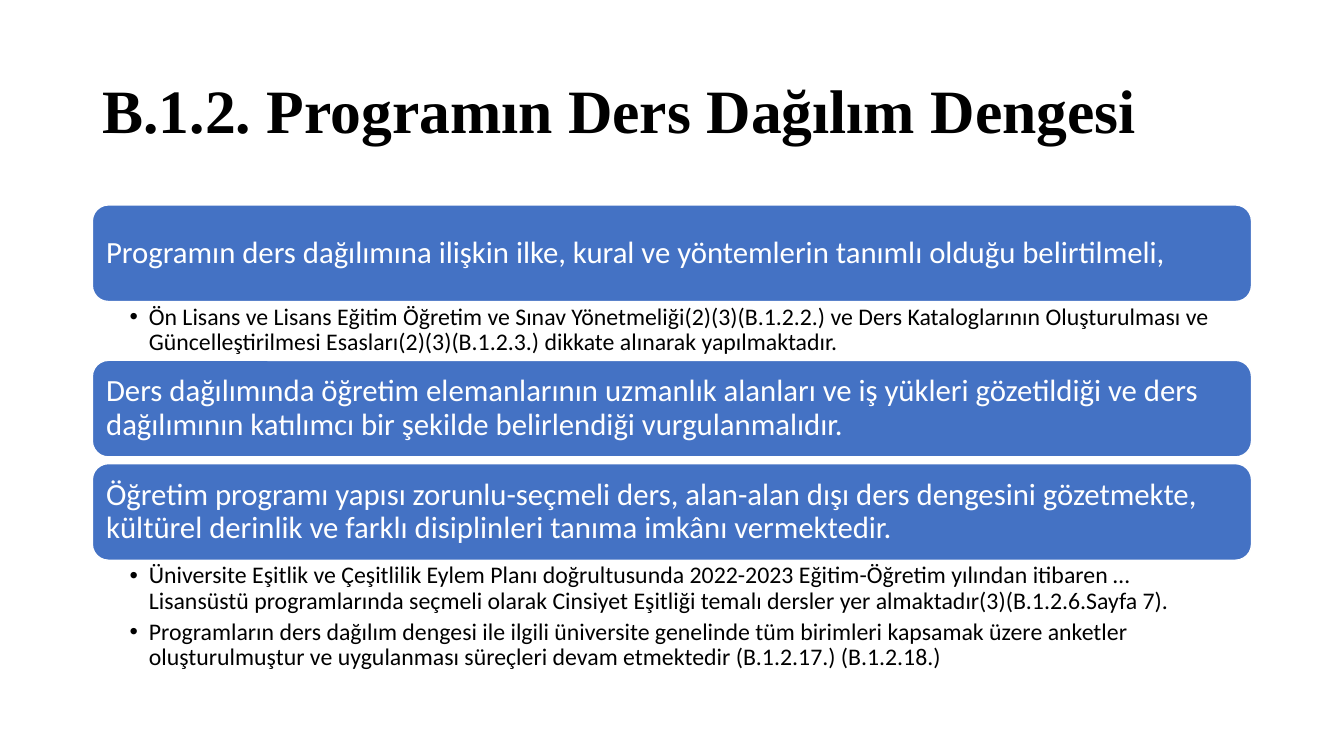
from dataclasses import dataclass

from lxml import etree
from pptx import Presentation
from pptx.dml.color import RGBColor
from pptx.enum.shapes import MSO_SHAPE
from pptx.enum.text import MSO_ANCHOR, MSO_AUTO_SIZE, PP_ALIGN
from pptx.oxml.ns import qn
from pptx.util import Inches, Pt

ROUNDED = MSO_SHAPE.ROUNDED_RECTANGLE
MIDDLE, TOP = MSO_ANCHOR.MIDDLE, MSO_ANCHOR.TOP
LEFT = PP_ALIGN.LEFT
NO_FIT = MSO_AUTO_SIZE.NONE

CELL = Inches(1 / 12)
COLUMNS, ROWS = 160, 90
MARGIN, WIDTH = 11, 138
TITLE_TOP, TITLE_ROWS = 4.8, 17.4
STACK_TOP, BAR_ROWS, GAP_ROWS = 24.4, 11.5, 0.8


@dataclass(frozen=True)
class Theme:
    """Colours, fonts and type sizes of the slide."""

    blue: RGBColor = RGBColor(0x44, 0x72, 0xC4)
    white: RGBColor = RGBColor(0xFF, 0xFF, 0xFF)
    black: RGBColor = RGBColor(0, 0, 0)
    title_font: str = "Times New Roman"
    body_font: str = "Calibri"
    title_size: int = 44
    bar_size: int = 22
    bullet_size: int = 17


THEME = Theme()

SECTIONS = [
    (
        "Programın ders dağılımına ilişkin ilke, kural ve yöntemlerin tanımlı olduğu belirtilmeli,",
        7,
        ["Ön Lisans ve Lisans Eğitim Öğretim ve Sınav Yönetmeliği(2)(3)(B.1.2.2.) ve Ders "
         "Kataloglarının Oluşturulması ve Güncelleştirilmesi Esasları(2)(3)(B.1.2.3.) dikkate "
         "alınarak yapılmaktadır."],
    ),
    (
        "Ders dağılımında öğretim elemanlarının uzmanlık alanları ve iş yükleri gözetildiği ve ders "
        "dağılımının katılımcı bir şekilde belirlendiği vurgulanmalıdır.",
        GAP_ROWS,
        [],
    ),
    (
        "Öğretim programı yapısı zorunlu-seçmeli ders, alan-alan dışı ders dengesini gözetmekte, "
        "kültürel derinlik ve farklı disiplinleri tanıma imkânı vermektedir.",
        14,
        ["Üniversite Eşitlik ve Çeşitlilik Eylem Planı doğrultusunda 2022-2023 Eğitim-Öğretim "
         "yılından itibaren … Lisansüstü programlarında seçmeli olarak Cinsiyet Eşitliği temalı "
         "dersler yer almaktadır(3)(B.1.2.6.Sayfa 7).",
         "Programların ders dağılım dengesi ile ilgili üniversite genelinde tüm birimleri kapsamak "
         "üzere anketler oluşturulmuştur ve uygulanması süreçleri devam etmektedir (B.1.2.17.) "
         "(B.1.2.18.)"],
    ),
]


def area(top, rows):
    """Return left, top, width and height of a full-width band of grid rows."""
    return [round(CELL * cells) for cells in (MARGIN, top, WIDTH, rows)]


def prepare_frame(frame, anchor, insets):
    """Set wrapping, anchor and the left, top, right and bottom insets."""
    frame.word_wrap = True
    frame.auto_size = NO_FIT
    frame.vertical_anchor = anchor
    (frame.margin_left, frame.margin_top,
     frame.margin_right, frame.margin_bottom) = map(Inches, insets)


def write(para, text, font, size, color, bold=False):
    """Add one formatted run to a left-aligned paragraph."""
    para.alignment = LEFT
    para.line_spacing = 0.9
    span = para.add_run()
    span.text = text
    span.font.name = font
    span.font.size = Pt(size)
    span.font.bold = bold
    span.font.color.rgb = color


def add_bullet(para):
    """Give a paragraph a hanging round bullet."""
    properties = para._p.get_or_add_pPr()
    properties.set("marL", str(Inches(0.19)))
    properties.set("indent", str(-Inches(0.19)))
    etree.SubElement(properties, qn("a:buFont")).set("typeface", "Arial")
    etree.SubElement(properties, qn("a:buChar")).set("char", "•")


def set_title(page, text):
    """Place and format the title placeholder."""
    title = page.shapes.title
    title.left, title.top, title.width, title.height = area(TITLE_TOP, TITLE_ROWS)
    prepare_frame(title.text_frame, MIDDLE, (0.1, 0.05, 0.1, 0.05))
    write(title.text_frame.paragraphs[0], text, THEME.title_font,
          THEME.title_size, THEME.black, bold=True)


def add_bar(page, top, text):
    """Add a blue rounded bar holding a criterion."""
    bar = page.shapes.add_shape(ROUNDED, *area(top, BAR_ROWS))
    bar.shadow.inherit = False
    bar.fill.solid()
    bar.fill.fore_color.rgb = THEME.blue
    bar.line.color.rgb = THEME.white
    bar.line.width = Pt(1)
    prepare_frame(bar.text_frame, MIDDLE, (0.09, 0.09, 0.09, 0.09))
    write(bar.text_frame.paragraphs[0], text, THEME.body_font, THEME.bar_size, THEME.white)


def add_bullets(page, top, rows, items):
    """Add a bulleted list below a bar."""
    box = page.shapes.add_textbox(*area(top, rows))
    frame = box.text_frame
    prepare_frame(frame, TOP, (0.37, 0.03, 0.17, 0.03))
    for index, item in enumerate(items):
        para = frame.add_paragraph() if index else frame.paragraphs[0]
        para.space_after = Pt(3.4)
        write(para, item, THEME.body_font, THEME.bullet_size, THEME.black)
        add_bullet(para)


def main():
    """Build and save the slide."""
    deck = Presentation()
    deck.slide_width = round(CELL * COLUMNS)
    deck.slide_height = round(CELL * ROWS)
    page = deck.slides.add_slide(deck.slide_layouts[5])
    set_title(page, "B.1.2. Programın Ders Dağılım Dengesi")
    top = STACK_TOP
    for heading, rows_below, items in SECTIONS:
        add_bar(page, top, heading)
        top += BAR_ROWS
        if items:
            add_bullets(page, top, rows_below, items)
        top += rows_below
    deck.save("out.pptx")


if __name__ == "__main__":
    main()
